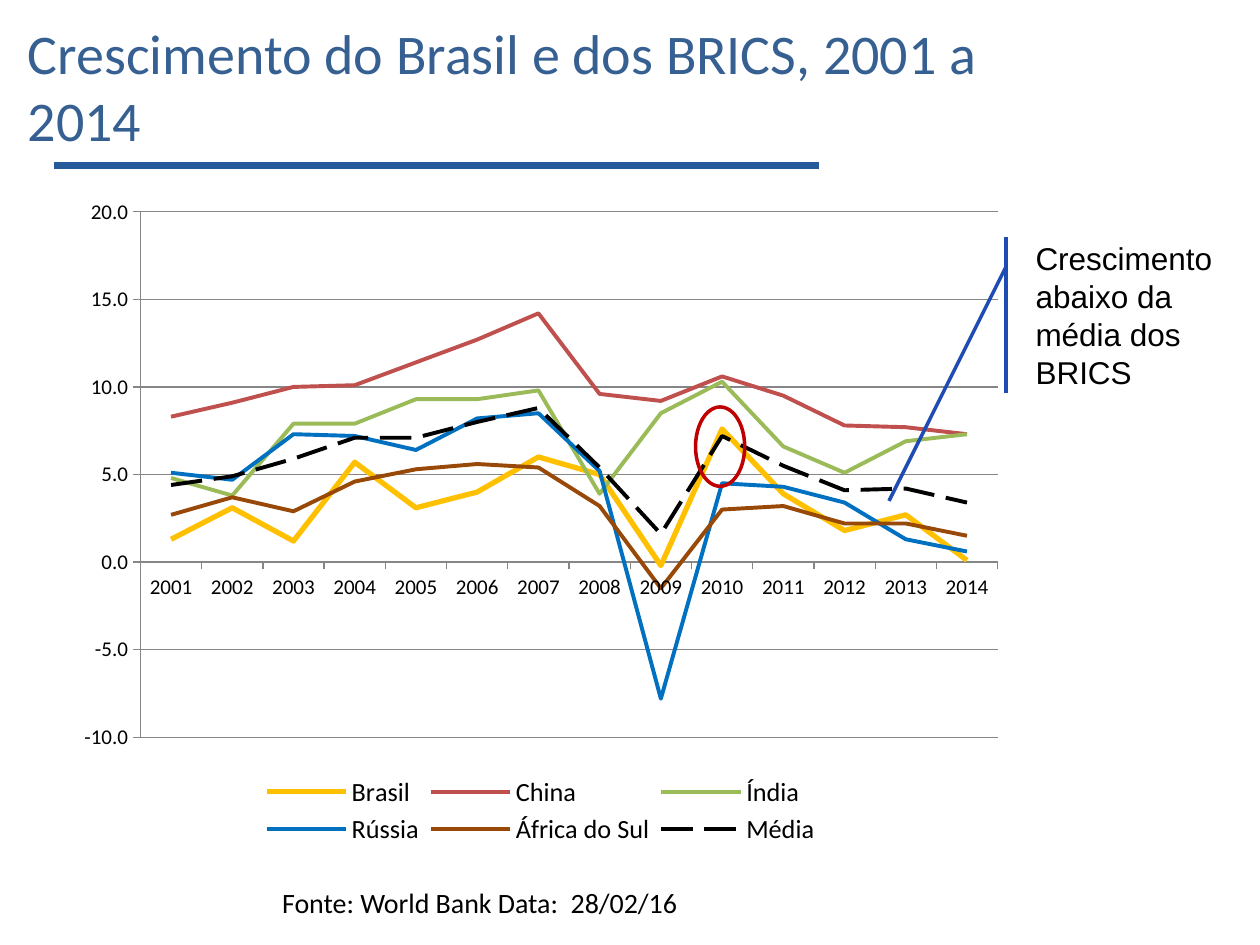
from pptx import Presentation
from pptx.chart.data import CategoryChartData
from pptx.dml.color import RGBColor
from pptx.enum.chart import XL_CHART_TYPE as ChartType, XL_LEGEND_POSITION as LegendPosition
from pptx.enum.chart import XL_MARKER_STYLE as Marker, XL_TICK_MARK as Tick
from pptx.enum.dml import MSO_LINE as Dash
from pptx.enum.shapes import MSO_CONNECTOR as Connector, MSO_SHAPE as Shape
from pptx.enum.text import MSO_ANCHOR as Anchor, MSO_AUTO_SIZE as AutoSize, PP_ALIGN as Align
from pptx.oxml import parse_xml
from pptx.oxml.ns import nsdecls
from pptx.util import Inches, Pt

TITLE_BLUE = RGBColor(0x37, 0x60, 0x92)
RULE_BLUE = RGBColor(0x26, 0x5A, 0x9A)
CALLOUT_BLUE = RGBColor(0x1E, 0x4C, 0xB2)
RED = RGBColor(0xC0, 0x00, 0x00)
BLACK = RGBColor(0x00, 0x00, 0x00)
GRAY = RGBColor(0x86, 0x86, 0x86)

YEARS = [str(year) for year in range(2001, 2015)]
GROWTH = {
    "Brasil": (RGBColor(0xFF, 0xC0, 0x00), 3,
               [1.3, 3.1, 1.2, 5.7, 3.1, 4, 6, 5, -0.2, 7.6, 3.9, 1.8, 2.7, 0.1]),
    "China": (RGBColor(0xC0, 0x50, 0x4D), 2.25,
              [8.3, 9.1, 10, 10.1, 11.4, 12.7, 14.2, 9.6, 9.2, 10.6, 9.5, 7.8, 7.7, 7.3]),
    "Índia": (RGBColor(0x9B, 0xBB, 0x59), 2.25,
              [4.8, 3.8, 7.9, 7.9, 9.3, 9.3, 9.8, 3.9, 8.5, 10.3, 6.6, 5.1, 6.9, 7.3]),
    "Rússia": (RGBColor(0x00, 0x70, 0xC0), 2.25,
               [5.1, 4.7, 7.3, 7.2, 6.4, 8.2, 8.5, 5.2, -7.8, 4.5, 4.3, 3.4, 1.3, 0.6]),
    "África do Sul": (RGBColor(0x98, 0x48, 0x07), 2.25,
                      [2.7, 3.7, 2.9, 4.6, 5.3, 5.6, 5.4, 3.2, -1.5, 3, 3.2, 2.2, 2.2, 1.5]),
    "Média": (BLACK, 2.25,
              [4.4, 4.9, 5.9, 7.1, 7.1, 8, 8.8, 5.4, 1.6, 7.2, 5.5, 4.1, 4.2, 3.4]),
}


def inches(box):
    """Turn a box in inches into slide lengths."""
    return [Inches(length) for length in box]


def style_font(font, color, **values):
    """Set font values and colour."""
    for name, value in values.items():
        setattr(font, name, value)
    font.color.rgb = color


def style_line(line, color, width):
    """Set line colour and width in points."""
    line.color.rgb = color
    line.width = Pt(width)


def write_text(frame, text, color, font_name, size, **values):
    """Write one left-aligned paragraph in a frame with the given settings."""
    for name, value in values.items():
        setattr(frame, name, value)
    para = frame.paragraphs[0]
    para.alignment = Align.LEFT
    span = para.add_run()
    span.text = text
    style_font(span.font, color, name=font_name, size=Pt(size), bold=False)


def place_title(page, box):
    """Place the title and the rule beneath it."""
    title = page.shapes.title
    title.left, title.top, title.width, title.height = inches(box)
    write_text(title.text_frame, "Crescimento do Brasil e dos BRICS, 2001 a 2014",
               TITLE_BLUE, "Calibri", 32, word_wrap=True, auto_size=AutoSize.NONE,
               vertical_anchor=Anchor.MIDDLE)
    left, top, width, height = box
    rule_top = top + height + 0.16
    rule = page.shapes.add_connector(
        Connector.STRAIGHT, *inches((left + 0.31, rule_top, left + 6.38, rule_top)))
    style_line(rule.line, RULE_BLUE, 4)
    rule._element.spPr.append(parse_xml(f"<a:effectLst {nsdecls('a')}/>"))


def set_layout(element, shares, inner=False):
    """Fix a chart part at shares of the chart's size."""
    for old in element.findall("{*}layout"):
        element.remove(old)
    target = '<c:layoutTarget val="inner"/>' if inner else ""
    modes = "".join(f'<c:{axis}Mode val="edge"/>' for axis in "xy")
    sizes = "".join(f'<c:{key} val="{share}"/>' for key, share in zip("xywh", shares))
    layout = parse_xml(f"<c:layout {nsdecls('c')}><c:manualLayout>{target}{modes}{sizes}"
                       "</c:manualLayout></c:layout>")
    element.insert(0 if inner else 1, layout)


def place_chart(page, box):
    """Place the line chart of yearly growth."""
    data = CategoryChartData(number_format="0.0")
    data.categories = YEARS
    for name, (_, _, values) in GROWTH.items():
        data.add_series(name, values)
    chart = page.shapes.add_chart(ChartType.LINE, *inches(box), data).chart
    chart.has_title = False
    style_font(chart.font, BLACK, name="Calibri", size=Pt(10))

    for axis in (chart.category_axis, chart.value_axis):
        axis.major_tick_mark, axis.minor_tick_mark = Tick.OUTSIDE, Tick.NONE
        style_font(axis.tick_labels.font, BLACK, name="Calibri", size=Pt(12))
        style_line(axis.format.line, GRAY, 0.75)
    scale = {"minimum_scale": -10, "maximum_scale": 20, "major_unit": 5,
             "has_major_gridlines": True}
    for name, value in scale.items():
        setattr(chart.value_axis, name, value)
    style_line(chart.value_axis.major_gridlines.format.line, GRAY, 0.75)
    labels = chart.value_axis.tick_labels
    labels.number_format, labels.number_format_is_linked = "0.0", False

    chart.plots[0].vary_by_categories = False
    for series in chart.plots[0].series:
        color, width, _ = GROWTH[series.name]
        style_line(series.format.line, color, width)
        series.smooth = False
        series.marker.style = Marker.NONE
        if series.name == "Média":
            series.format.line.dash_style = Dash.LONG_DASH

    chart.has_legend = True
    legend = chart.legend
    legend.position, legend.include_in_layout = LegendPosition.BOTTOM, False
    style_font(legend.font, BLACK, name="Calibri", size=Pt(15))
    set_layout(legend._element, (0.2, 0.88, 0.6, 0.12))
    set_layout(chart._chartSpace.chart.plotArea, (0.08, 0.04, 0.9, 0.79), inner=True)


def add_outline(page, kind, box, color):
    """Add an unfilled shape with a coloured outline."""
    shape = page.shapes.add_shape(kind, *inches(box))
    shape.shadow.inherit = False
    shape.fill.background()
    style_line(shape.line, color, 2)
    return shape


def place_callout(page, box):
    """Place the note that points at the years below the average."""
    callout = add_outline(page, Shape.LINE_CALLOUT_1_ACCENT_BAR, box, CALLOUT_BLUE)
    for index, share in enumerate((0.19, -0.08, 1.69, -0.63)):
        callout.adjustments[index] = share
    write_text(callout.text_frame, "Crescimento abaixo da média dos BRICS", BLACK,
               "Arial", 18, word_wrap=True, vertical_anchor=Anchor.MIDDLE)


def place_source(page, box):
    """Place the source line."""
    source = page.shapes.add_textbox(*inches(box))
    write_text(source.text_frame, "Fonte: World Bank Data:  28/02/16", BLACK,
               "Calibri", 16, word_wrap=False, auto_size=AutoSize.SHAPE_TO_FIT_TEXT)


def main():
    """Build and save the deck."""
    deck = Presentation()
    deck.slide_width, deck.slide_height = Inches(10), Inches(7.5)
    page = deck.slides.add_slide(deck.slide_layouts[5])
    place_title(page, (0.12, 0.21, 8.07, 0.94))
    place_chart(page, (0.51, 1.47, 7.56, 5.28))
    add_outline(page, Shape.OVAL, (5.52, 3.23, 0.39, 0.63), RED)
    place_callout(page, (8.12, 1.88, 1.69, 1.24))
    place_source(page, (2.14, 6.98, 3.38, 0.37))
    deck.save("out.pptx")


if __name__ == "__main__":
    main()
